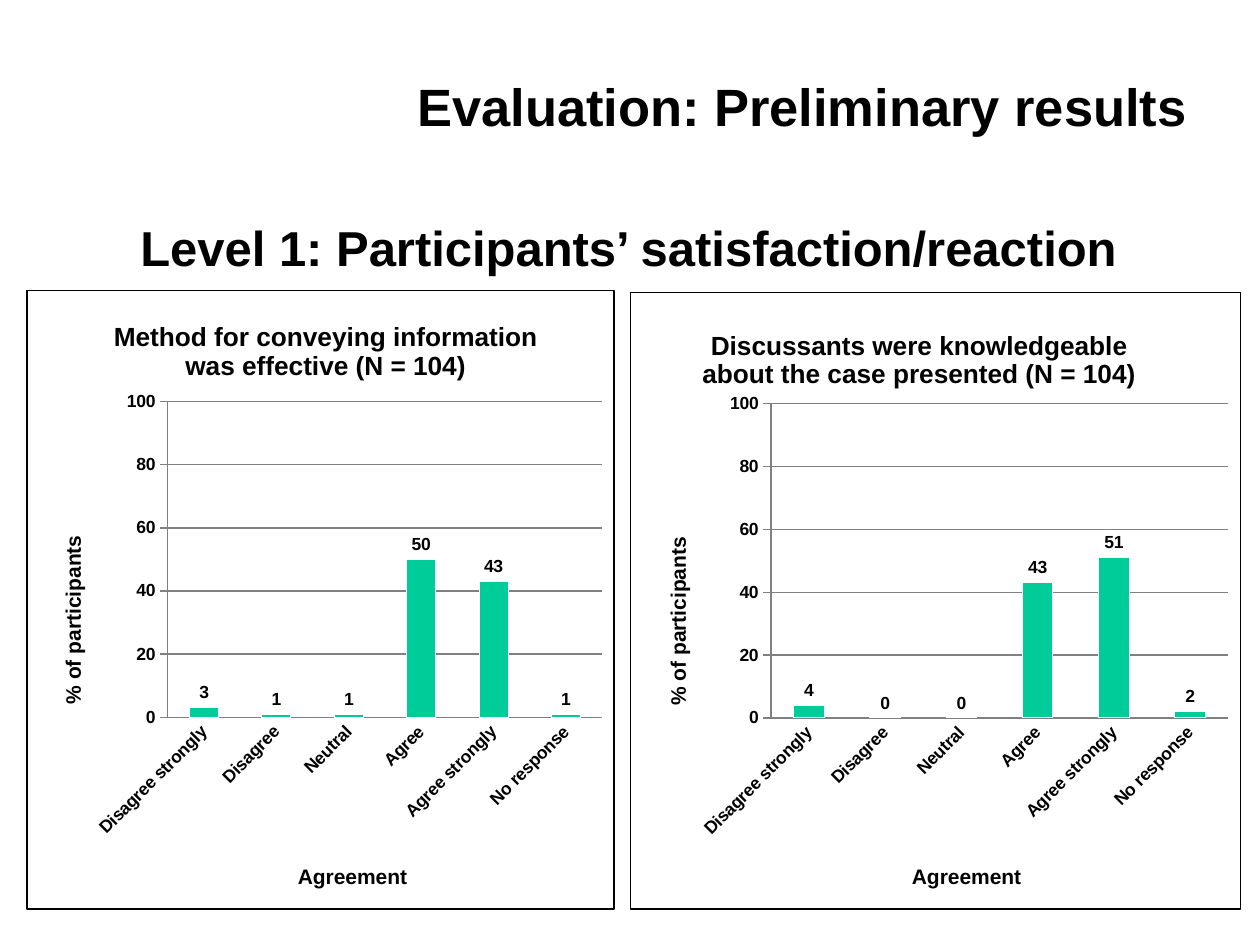
import pptx
import pptx.chart.data
import pptx.dml.color
import pptx.enum.chart
import pptx.enum.text
import pptx.oxml
import pptx.oxml.ns
import pptx.util
from pptx.util import Cm

FONT = "Arial"
COLORS = {"text": "000000", "bar": "00CC99", "edge": "FFFFFF", "grid": "808080"}
CATEGORIES = ["Disagree strongly", "Disagree", "Neutral",
              "Agree", "Agree strongly", "No response"]
qn = pptx.oxml.ns.qn


def rgb(name):
    return pptx.dml.color.RGBColor.from_string(COLORS[name])


def style_font(font, size):
    font.name = FONT
    font.size = pptx.util.Pt(size)
    font.bold = True
    font.color.rgb = rgb("text")


def add_heading(s, text, size, left, top, width, height):
    tf = s.shapes.add_textbox(left, top, width, height).text_frame
    tf.word_wrap = True
    tf.vertical_anchor = pptx.enum.text.MSO_ANCHOR.MIDDLE
    tf.text = text
    p = tf.paragraphs[0]
    p.alignment = pptx.enum.text.PP_ALIGN.CENTER
    style_font(p.runs[0].font, size)


def set_layout(element, x, y, w=None, h=None):
    """Place a chart part by fractions of the chart's size."""
    for old in element.findall(qn("c:layout")):
        element.remove(old)
    parts = [("xMode", "edge"), ("yMode", "edge"), ("x", x), ("y", y)]
    if w is not None:
        parts = [("layoutTarget", "inner")] + parts + [("w", w), ("h", h)]
    body = "".join(f'<c:{tag} val="{val}"/>' for tag, val in parts)
    layout = pptx.oxml.parse_xml(
        f'<c:layout {pptx.oxml.ns.nsdecls("c")}>'
        f"<c:manualLayout>{body}</c:manualLayout></c:layout>")
    tx = element.find(qn("c:tx"))
    if tx is None:
        element.insert(0, layout)
    else:
        tx.addnext(layout)


def set_title(title, text, size, x, y, rotation=0):
    tf = title.text_frame
    tf.text = text
    style_font(tf.paragraphs[0].runs[0].font, size)
    body = tf._txBody.find(qn("a:bodyPr"))
    body.set("rot", str(rotation * 60000))
    body.set("vert", "horz")
    set_layout(title._element, x, y)


def add_border(chart):
    border = pptx.oxml.parse_xml(
        f'<c:spPr {pptx.oxml.ns.nsdecls("c", "a")}><a:noFill/><a:ln w="9525">'
        f'<a:solidFill><a:srgbClr val="{COLORS["text"]}"/></a:solidFill>'
        "</a:ln></c:spPr>")
    chart._chartSpace.find(qn("c:chart")).addnext(border)


def style_axis(axis, tick_mark):
    style_font(axis.tick_labels.font, 10)
    axis.major_tick_mark = tick_mark
    axis.minor_tick_mark = pptx.enum.chart.XL_TICK_MARK.NONE
    axis.format.line.color.rgb = rgb("grid")


def add_column_chart(s, title, values, box, title_at, plot_box):
    data = pptx.chart.data.CategoryChartData(number_format="0")
    data.categories = CATEGORIES
    data.add_series("Series 1", values)
    chart = s.shapes.add_chart(
        pptx.enum.chart.XL_CHART_TYPE.COLUMN_CLUSTERED, *box, data).chart
    style_font(chart.font, 10)
    add_border(chart)
    chart.has_legend = False
    set_title(chart.chart_title, title, 15, *title_at)
    set_layout(chart._chartSpace.chart.plotArea, *plot_box)

    # Axes
    ticks = pptx.enum.chart.XL_TICK_MARK
    cat, val = chart.category_axis, chart.value_axis
    style_axis(cat, ticks.NONE)
    style_axis(val, ticks.OUTSIDE)
    cat._element.find(qn("c:txPr")).find(qn("a:bodyPr")).set("rot", "-2700000")
    val.minimum_scale, val.maximum_scale, val.major_unit = 0, 100, 20
    val.tick_labels.number_format = "0"
    val.tick_labels.number_format_is_linked = False
    val.major_gridlines.format.line.color.rgb = rgb("grid")
    set_title(cat.axis_title, "Agreement", 12, 0.455, 0.92)
    set_title(val.axis_title, "% of participants", 12, 0.05, 0.39, -90)

    # Columns and their values
    plot = chart.plots[0]
    plot.gap_width = 150
    plot.vary_by_categories = False
    series = plot.series[0]
    series.format.fill.solid()
    series.format.fill.fore_color.rgb = rgb("bar")
    series.format.line.color.rgb = rgb("edge")
    labels = series.data_labels
    labels.show_value = True
    labels.number_format = "0"
    labels.number_format_is_linked = False
    labels.position = pptx.enum.chart.XL_LABEL_POSITION.OUTSIDE_END
    style_font(labels.font, 10)


def main():
    prs = pptx.Presentation()
    prs.slide_width, prs.slide_height = Cm(25.4), Cm(19.05)
    s = prs.slides.add_slide(prs.slide_layouts[6])

    # Headings
    add_heading(s, "Evaluation: Preliminary results", 30,
                Cm(7.82), Cm(0.64), Cm(16.71), Cm(2.97))
    add_heading(s, "Level 1: Participants’ satisfaction/reaction", 28,
                Cm(1.8), Cm(4.27), Cm(21.74), Cm(1.4))

    # Charts
    add_column_chart(
        s, "Method for conveying information was effective (N = 104)",
        [3, 1, 1, 50, 43, 1],
        (Cm(0.53), Cm(5.84), Cm(11.86), Cm(12.5)),
        (0.14, 0.04), (0.24, 0.18, 0.74, 0.51))
    add_column_chart(
        s, "Discussants were knowledgeable about the case presented (N = 104)",
        [4, 0, 0, 43, 51, 2],
        (Cm(12.7), Cm(5.89), Cm(12.32), Cm(12.45)),
        (0.11, 0.05), (0.23, 0.18, 0.75, 0.51))

    prs.save("out.pptx")


if __name__ == "__main__":
    main()
